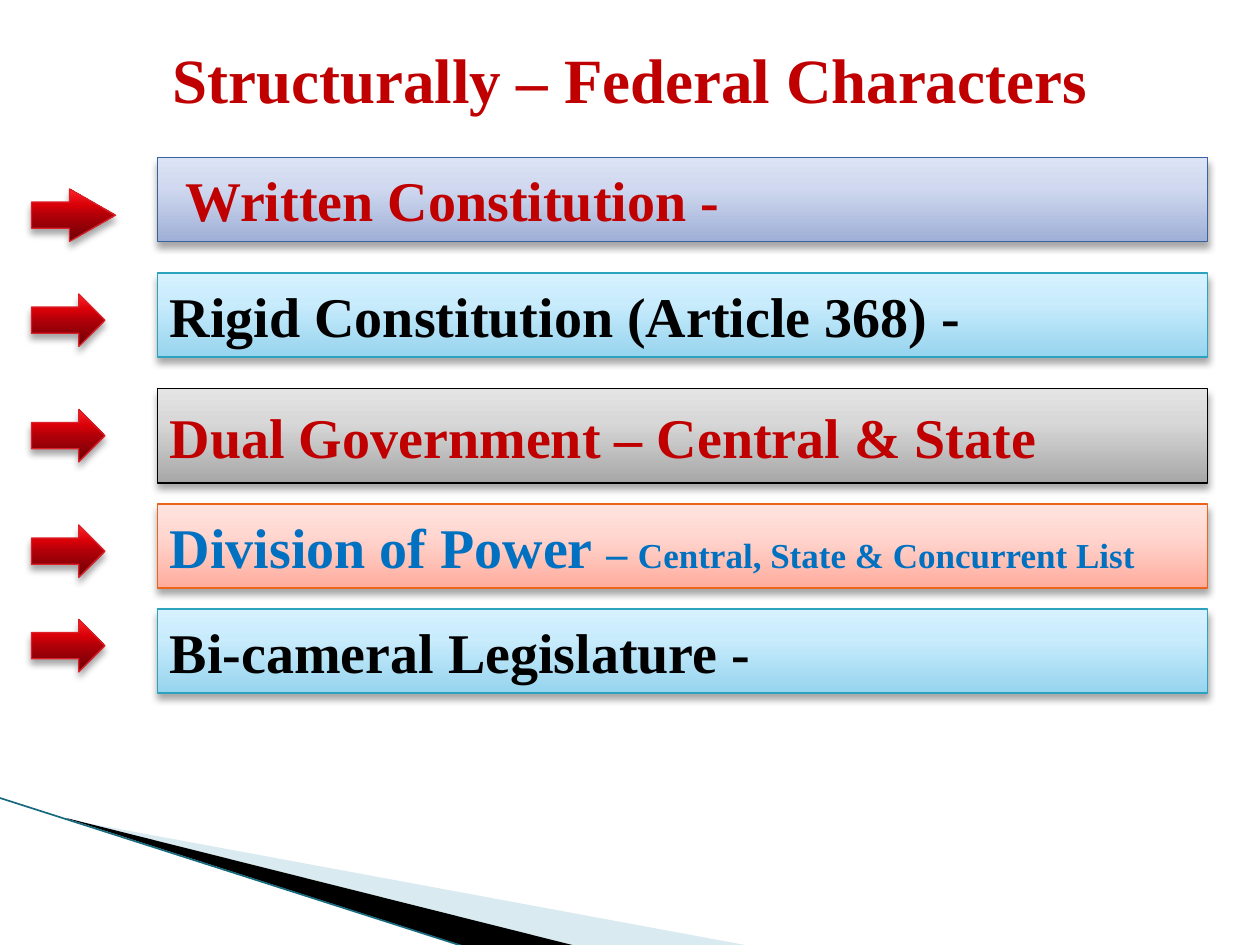
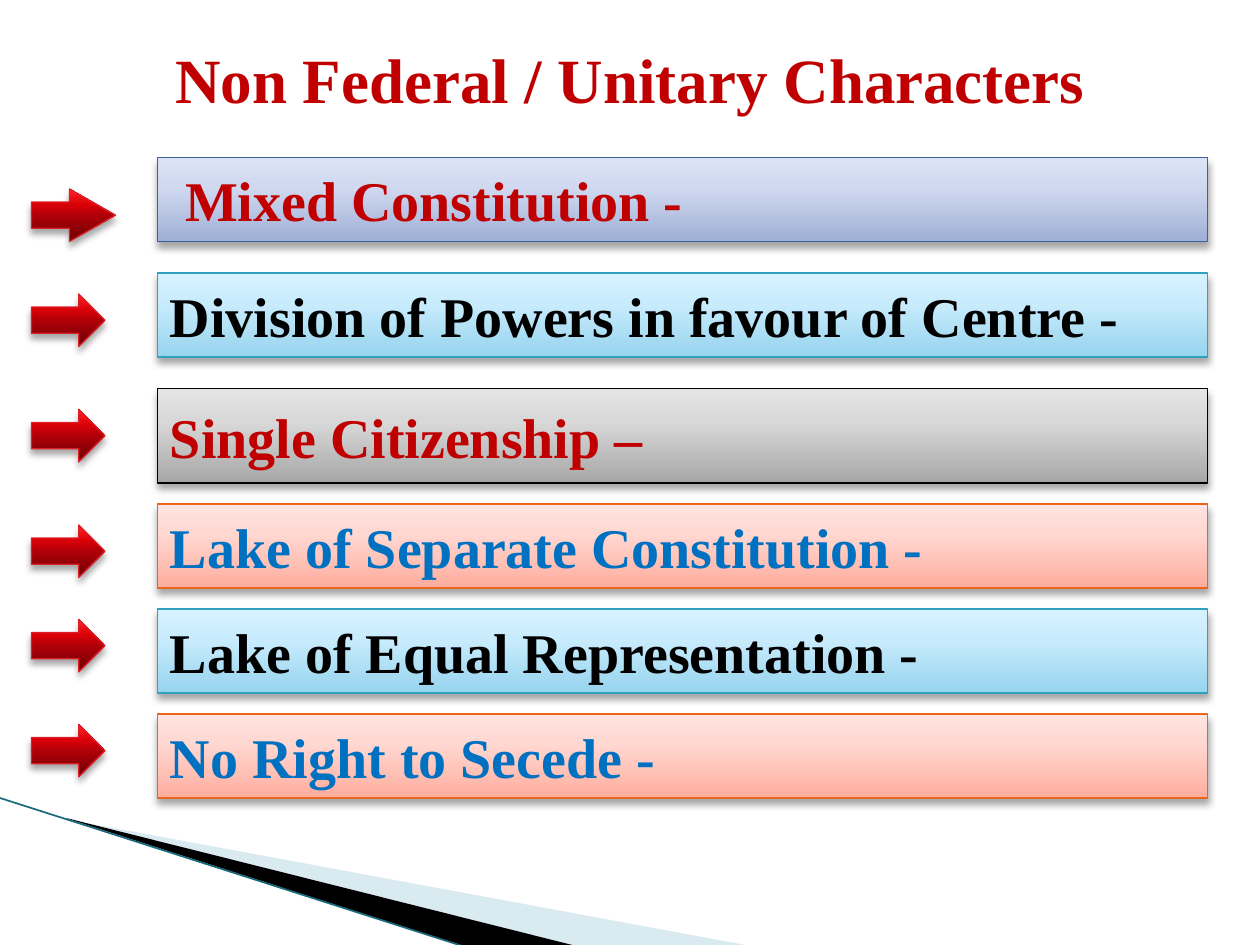
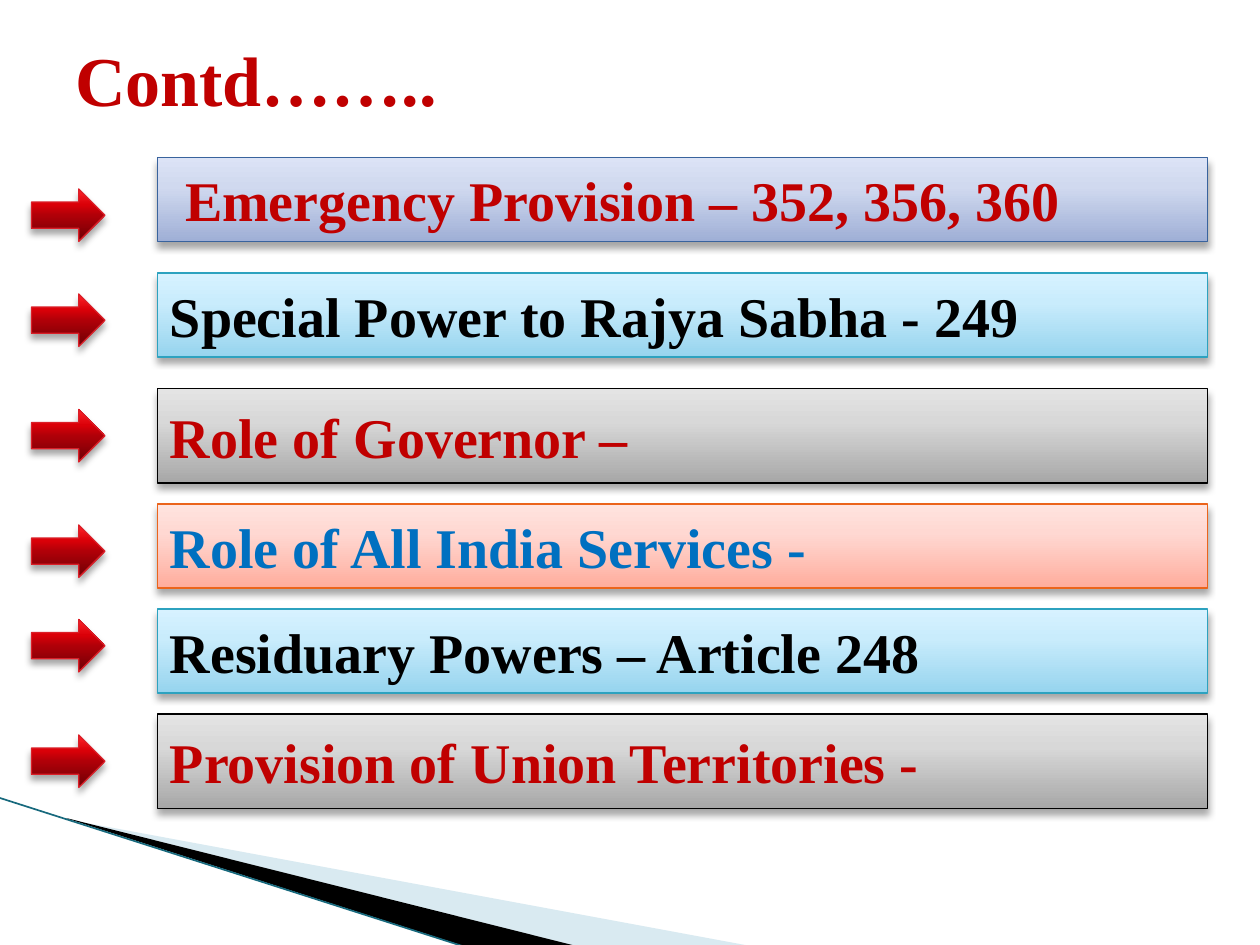
from lxml.etree import SubElement
from pptx import Presentation
from pptx.dml.color import RGBColor as RGB
from pptx.enum.shapes import MSO_CONNECTOR as Connector, MSO_SHAPE as Shape
from pptx.enum.text import MSO_ANCHOR as Anchor, PP_ALIGN as Align
from pptx.oxml.ns import qn
from pptx.util import Pt


class Theme:
    font = "Times New Roman"
    red, blue, black = "C00000", "0070C0", "000000"
    title_size, contd_size = 36, 40
    row_size, dash_size, list_size = 32, 24, 20
    edge_width = 0.75
    facet_pale, facet_dark, facet_edge = "A0CBDC", "000000", "17697D"
    lavender = {0: "9FAFD6", 65: "D0D9EF", 100: "DCE3F6"}
    sky = {0: "96D4EE", 65: "C9ECFC", 100: "D7F2FF"}
    grey = {0: "A7A7A7", 65: "D8D8D8", 100: "E4E4E4"}
    salmon = {0: "FFAC9C", 65: "FFD8D2", 100: "FFE4DF"}
    crimson = {0: "6D0005", 50: "B00008", 70: "DA0008", 100: "FF2429"}
    bar_styles = {
        "lavender": (lavender, "39639D", red, 48),
        "sky": (sky, "2DA2BF", black, 48),
        "grey": (grey, "000000", red, 54),
        "salmon": (salmon, "EB641B", blue, 48),
    }
    arrow_edge = "DA1F28"


ROW_TOPS = [90, 156, 222, 288, 348, 408]
ARROW_DROPS = [18, 12, 12, 12, 6, 6]
ROW_STYLES = ["lavender", "sky", "grey", "salmon", "sky", "salmon"]


def set_all(target, values):
    for name, value in values.items():
        setattr(target, name, value)


def box(*lengths):
    return [Pt(length) for length in lengths]


def paint_gradient(shape, stops):
    shape.fill.gradient()
    shape.fill.gradient_angle = 90
    stop_list = shape._element.spPr.find(qn("a:gradFill")).find(qn("a:gsLst"))
    for stop in list(stop_list):
        stop_list.remove(stop)
    for percent, colour in stops.items():
        stop = SubElement(stop_list, qn("a:gs"), pos=str(percent * 1000))
        SubElement(stop, qn("a:srgbClr"), val=colour)


def cast_shadow(shape):
    shape.shadow.inherit = False
    effects = shape._element.spPr.find(qn("a:effectLst"))
    shadow = SubElement(effects, qn("a:outerShdw"), blurRad=str(Pt(4)),
                        dist=str(Pt(3)), dir="5400000", rotWithShape="0")
    colour = SubElement(shadow, qn("a:srgbClr"), val="000000")
    SubElement(colour, qn("a:alpha"), val="35000")


def add_glossy(slide, kind, bounds, stops, edge):
    shape = slide.shapes.add_shape(kind, *box(*bounds))
    paint_gradient(shape, stops)
    shape.line.color.rgb = RGB.from_string(edge)
    shape.line.width = Pt(Theme.edge_width)
    cast_shadow(shape)
    return shape


def write(shape, pieces, colour, align=Align.LEFT):
    set_all(shape.text_frame, {"word_wrap": True, "vertical_anchor": Anchor.MIDDLE})
    paragraph = shape.text_frame.paragraphs[0]
    paragraph.alignment = align
    for wording, size in pieces:
        run = paragraph.add_run()
        run.text = wording
        set_all(run.font, {"name": Theme.font, "size": Pt(size), "bold": True})
        run.font.color.rgb = RGB.from_string(colour)
    return paragraph


def add_title(slide, wording, size, align):
    title = slide.shapes.add_textbox(*box(36, 0, 648, 90))
    write(title, [(wording, size)], Theme.red, align)


def add_bar(slide, top, style, pieces):
    stops, edge, ink, height = Theme.bar_styles[style]
    bar = add_glossy(slide, Shape.RECTANGLE, (90, top, 600, height), stops, edge)
    paragraph = write(bar, pieces, ink)
    if style == "lavender":
        set_all_indents = {"marL": Pt(28.8), "indent": Pt(-20.16)}
        for name, length in set_all_indents.items():
            paragraph._p.get_or_add_pPr().set(name, str(length))


def add_arrow(slide, top, long_head):
    width = 48 if long_head else 42
    arrow = add_glossy(slide, Shape.RIGHT_ARROW, (18, top, width, 30),
                       Theme.crimson, Theme.arrow_edge)
    if long_head:
        arrow.adjustments[1] = 0.875


def add_facet(slide, corners, colour, opacity=100):
    start, *rest = [box(*corner) for corner in corners]
    builder = slide.shapes.build_freeform(*start)
    builder.add_line_segments(rest)
    facet = builder.convert_to_shape()
    facet.shadow.inherit = False
    facet.line.fill.background()
    facet.fill.solid()
    facet.fill.fore_color.rgb = RGB.from_string(colour)
    if opacity < 100:
        tint = facet._element.spPr.find(qn("a:solidFill"))[0]
        SubElement(tint, qn("a:alpha"), val=str(opacity * 1000))


def add_corner(slide):
    add_facet(slide, [(39.6, 468.5), (428.5, 540.5), (328.5, 540.5), (39.6, 468)],
              Theme.facet_pale, 40)
    add_facet(slide, [(38, 467.5), (329, 540.5), (268, 541.5), (39, 468)],
              Theme.facet_dark)
    edge = slide.shapes.add_connector(Connector.STRAIGHT, *box(-0.7, 455.8, 267, 541.5))
    edge.line.color.rgb = RGB.from_string(Theme.facet_edge)
    edge.line.width = Pt(0.95)
    SubElement(edge._element.spPr, qn("a:effectLst"))


def add_characters_slide(deck, title, rows, title_size=Theme.title_size,
                         title_align=Align.CENTER, long_first_arrow=True,
                         styles=ROW_STYLES, drops=ARROW_DROPS):
    slide = deck.slides.add_slide(deck.slide_layouts[6])
    add_corner(slide)
    add_title(slide, title, title_size, title_align)
    for index, (row, top, style, drop) in enumerate(zip(rows, ROW_TOPS, styles, drops)):
        pieces = [(row, Theme.row_size)] if isinstance(row, str) else row
        add_bar(slide, top, style, pieces)
        add_arrow(slide, top + drop, long_first_arrow and index == 0)


def main():
    deck = Presentation()
    set_all(deck, {"slide_width": Pt(720), "slide_height": Pt(540)})
    add_characters_slide(deck, "Structurally – Federal Characters", [
        "Written Constitution -",
        "Rigid Constitution (Article 368) -",
        "Dual Government – Central & State",
        [("Division of Power ", Theme.row_size), ("– ", Theme.dash_size),
         ("Central, State & Concurrent List", Theme.list_size)],
        "Bi-cameral Legislature -",
    ])
    add_characters_slide(deck, "Non Federal / Unitary Characters", [
        "Mixed Constitution -",
        "Division of Powers in favour of Centre -",
        "Single Citizenship –",
        "Lake of Separate Constitution -",
        "Lake of Equal Representation -",
        "No Right to Secede -",
    ])
    add_characters_slide(deck, "Contd……..", [
        "Emergency Provision – 352, 356, 360",
        "Special Power to Rajya Sabha - 249",
        "Role of Governor –",
        "Role of All India Services -",
        "Residuary Powers – Article 248",
        "Provision of Union Territories -",
    ], title_size=Theme.contd_size, title_align=Align.LEFT, long_first_arrow=False,
        styles=ROW_STYLES[:5] + ["grey"], drops=ARROW_DROPS[:5] + [12])
    deck.save("out.pptx")


if __name__ == "__main__":
    main()
